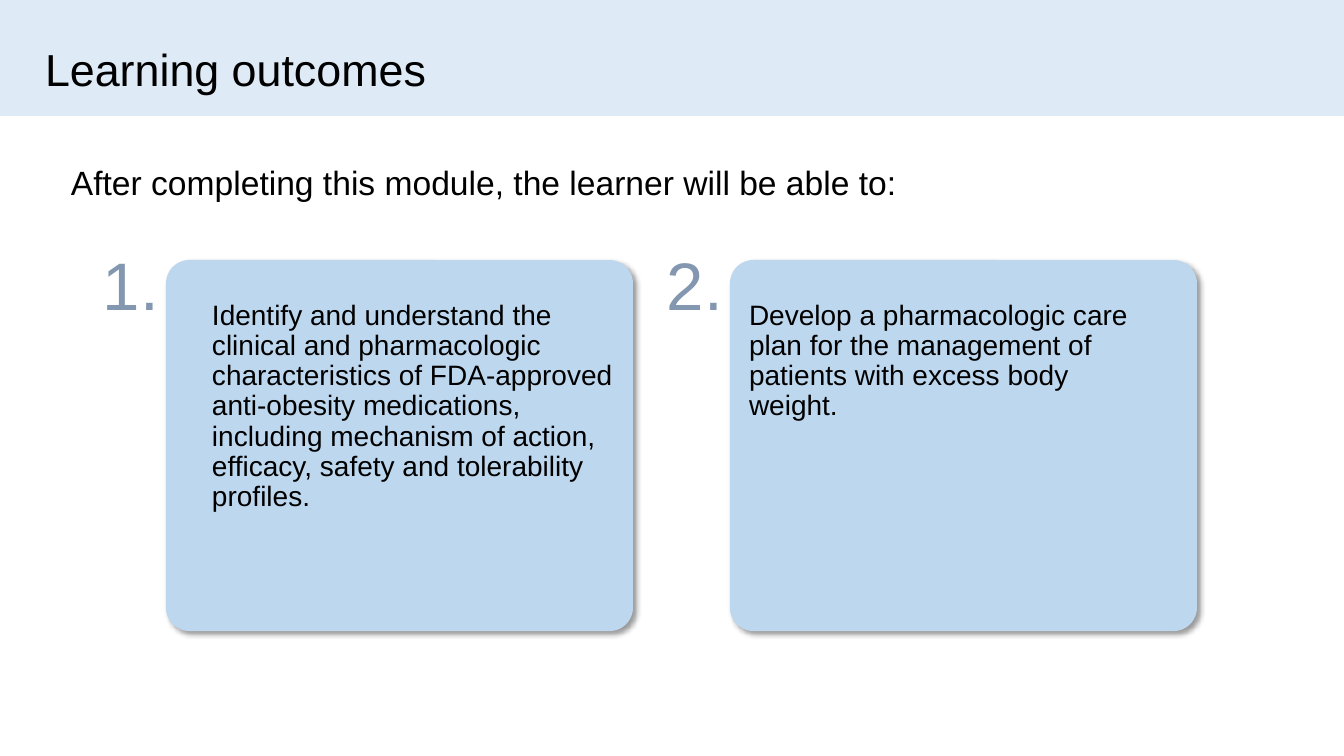
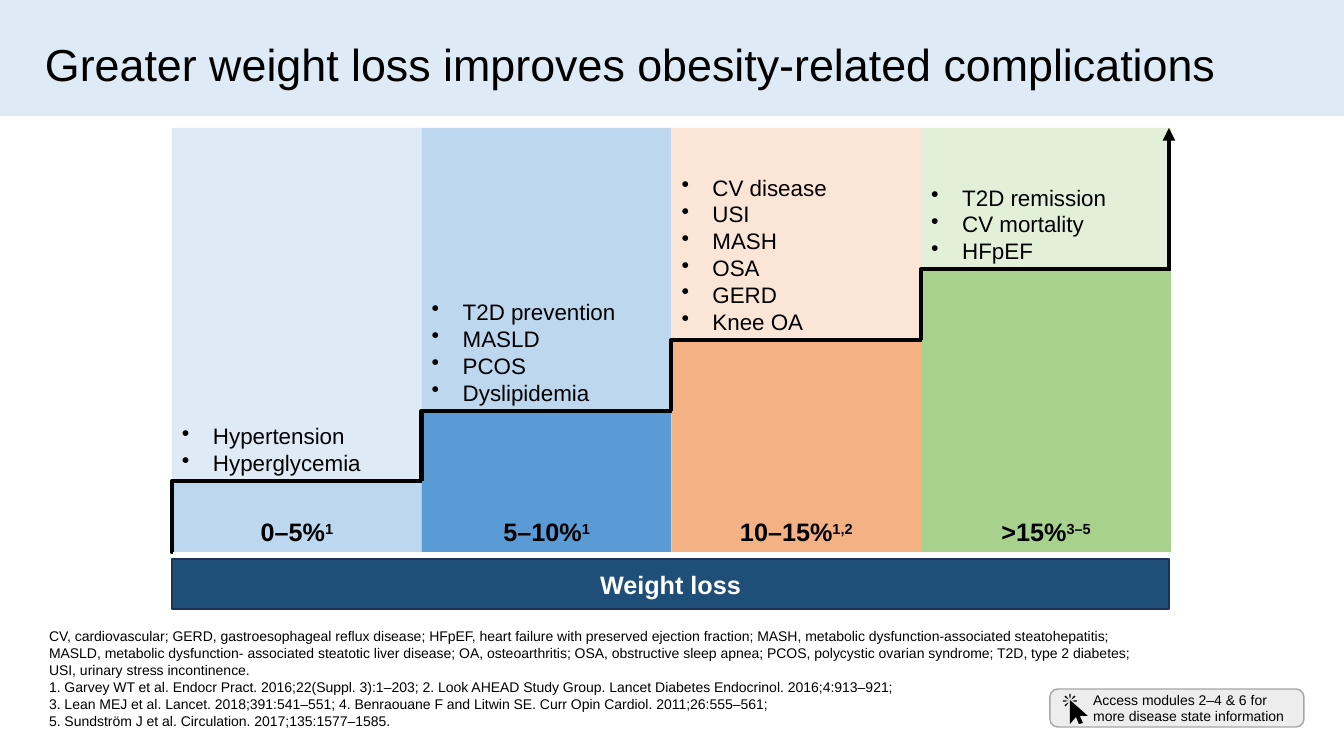
import math
from collections import namedtuple
from dataclasses import dataclass

from lxml import etree
from pptx import Presentation
from pptx import util as u
from pptx.dml.color import RGBColor
from pptx.enum import shapes, text
from pptx.oxml.ns import qn

EMU_PER_PX = 914400 / 100.8
Box = namedtuple("Box", "left top width height")
Step = namedtuple("Step", "label citation benefits column tint")


@dataclass(frozen=True)
class Theme:
    font: str = "Arial"
    ink: str = "000000"
    white: str = "FFFFFF"
    band: str = "DEEBF7"
    card: str = "BDD7EE"
    number: str = "8497B0"
    axis: str = "1F4E79"
    axis_line: str = "1E3256"
    button: str = "EDEDED"
    button_line: str = "A6A6A6"
    title_size: int = 32
    number_size: int = 48
    intro_size: int = 24
    card_size: int = 20
    label_size: int = 18
    list_size: int = 16
    note_size: int = 10


THEME = Theme()
SLIDE = Box(0, 0, 1344, 756)
BAND = Box(0, 0, 1344, 116)

OUTCOMES = [
    ("Identify and understand the clinical and pharmacologic characteristics of "
     "FDA-approved anti-obesity medications, including mechanism of action, "
     "efficacy, safety and tolerability profiles.", 46),
    ("Develop a pharmacologic care plan for the management of patients with "
     "excess body weight.", 19),
]

STEPS = [
    Step("0–5%", "1", ["Hypertension", "Hyperglycemia"], "BDD7EE", "DEEBF7"),
    Step("5–10%", "1", ["T2D prevention", "MASLD", "PCOS", "Dyslipidemia"],
         "5B9BD5", "BDD7EE"),
    Step("10–15%", "1,2", ["CV disease", "USI", "MASH", "OSA", "GERD", "Knee OA"],
         "F4B183", "FBE5D6"),
    Step(">15%", "3–5", ["T2D remission", "CV mortality", "HFpEF"],
         "A9D18E", "E2F0D9"),
]

NOTES = [
    "CV, cardiovascular; GERD, gastroesophageal reflux disease; HFpEF, heart failure "
    "with preserved ejection fraction; MASH, metabolic dysfunction-associated "
    "steatohepatitis; MASLD, metabolic dysfunction- associated steatotic liver disease; "
    "OA, osteoarthritis; OSA, obstructive sleep apnea; PCOS, polycystic ovarian syndrome; "
    "T2D, type 2 diabetes;\nUSI, urinary stress incontinence.",
    "1. Garvey WT et al. Endocr Pract. 2016;22(Suppl. 3):1–203; "
    "2. Look AHEAD Study Group. Lancet Diabetes Endocrinol. 2016;4:913–921;\n"
    "3. Lean MEJ et al. Lancet. 2018;391:541–551; "
    "4. Benraouane F and Litwin SE. Curr Opin Cardiol. 2011;26:555–561;\n"
    "5. Sundström J et al. Circulation. 2017;135:1577–1585.",
]


def px(length):
    return u.Emu(round(length * EMU_PER_PX))


def emu(box):
    return [px(length) for length in box]


def rgb(color):
    return RGBColor.from_string(color)


def write_text(shape, paragraphs, size, color=THEME.ink, bold=False, align="LEFT",
               anchor="TOP", spacing=None, insets=(10, 5, 10, 5), indent=0, bullet=None):
    """Fill a shape; a paragraph is a string or a (text, superscript) pair."""
    frame = shape.text_frame
    frame.word_wrap = True
    frame.vertical_anchor = getattr(text.MSO_ANCHOR, anchor)
    (frame.margin_left, frame.margin_top,
     frame.margin_right, frame.margin_bottom) = emu(insets)

    for index, content in enumerate(paragraphs):
        paragraph = frame.add_paragraph() if index else frame.paragraphs[0]
        properties = paragraph._p.get_or_add_pPr()
        properties.set("marL", str(px(indent)))
        properties.set("indent", str(-px(indent) if bullet else 0))
        if bullet:
            etree.SubElement(properties, qn("a:buChar"), char=bullet)
        paragraph.alignment = getattr(text.PP_ALIGN, align)
        if spacing:
            paragraph.line_spacing = spacing

        body, superscript = content if isinstance(content, tuple) else (content, None)
        for number, line in enumerate(body.split("\n")):
            if number:
                paragraph.add_line_break()
            paragraph.add_run().text = line
        if superscript:
            run = paragraph.add_run()
            run.text = superscript
            run.font._element.set("baseline", "30000")
        for run in paragraph.runs:
            run.font.name = THEME.font
            run.font.size = u.Pt(size)
            run.font.bold = bold
            run.font.color.rgb = rgb(color)
        for line_break in paragraph._p.findall(qn("a:br")):
            etree.SubElement(line_break, qn("a:rPr"), sz=str(size * 100))


def add_text(slide, box, paragraphs, size, **style):
    write_text(slide.shapes.add_textbox(*emu(box)), paragraphs, size, **style)


def paint(shape, fill, line=None):
    shape.fill.solid()
    shape.fill.fore_color.rgb = rgb(fill)
    if line:
        shape.line.color.rgb = rgb(line)
        shape.line.width = u.Pt(1)
    else:
        shape.line.fill.background()
    shape.shadow.inherit = False


def add_panel(slide, box, fill, line=None, corner=None):
    """Add a rectangle, rounded when a corner ratio is given."""
    kind = shapes.MSO_SHAPE.RECTANGLE if corner is None else shapes.MSO_SHAPE.ROUNDED_RECTANGLE
    panel = slide.shapes.add_shape(kind, *emu(box))
    if corner is not None:
        panel.adjustments[0] = corner
    paint(panel, fill, line)
    return panel


def add_drop_shadow(shape):
    effects = shape._element.spPr.find(qn("a:effectLst"))
    shadow = etree.SubElement(effects, qn("a:outerShdw"), blurRad=str(u.Pt(4)),
                              dist=str(u.Pt(3)), dir="2700000", algn="tl", rotWithShape="0")
    color = etree.SubElement(shadow, qn("a:srgbClr"), val=THEME.ink)
    etree.SubElement(color, qn("a:alpha"), val="40000")


def add_line(slide, start, end, kind="STRAIGHT", arrow=False):
    connector = slide.shapes.add_connector(
        getattr(shapes.MSO_CONNECTOR, kind), *emu((*start, *end)))
    connector.line.color.rgb = rgb(THEME.ink)
    connector.line.width = u.Pt(3)
    properties = connector._element.spPr
    if kind == "ELBOW":
        adjustments = properties.find(qn("a:prstGeom")).get_or_add_avLst()
        etree.SubElement(adjustments, qn("a:gd"), name="adj1", fmla="val -100")
    if arrow:
        etree.SubElement(connector.line._get_or_add_ln(), qn("a:tailEnd"), type="triangle")
    etree.SubElement(properties, qn("a:effectLst"))


def add_polygon(slide, points, fill):
    corners = [tuple(emu(point)) for point in points]
    builder = slide.shapes.build_freeform(*corners[0], scale=1.0)
    builder.add_line_segments(corners[1:], close=True)
    paint(builder.convert_to_shape(), fill)


def start_slide(presentation, title, title_box):
    slide = presentation.slides.add_slide(presentation.slide_layouts[6])
    add_panel(slide, BAND, THEME.band)
    add_text(slide, title_box, [title], THEME.title_size, anchor="MIDDLE", spacing=0.9)
    return slide


def add_outcome(slide, box, number, outcome, text_offset):
    """Add a card with its number hanging outside the top left corner."""
    add_drop_shadow(add_panel(slide, box, THEME.card, corner=0.063))
    add_text(slide, Box(box.left - 73, box.top - 22, 103, 92), [f"{number}."],
             THEME.number_size, color=THEME.number)
    add_text(slide, Box(box.left + text_offset, box.top + 29, 403, box.height - 87),
             [outcome], THEME.card_size, spacing=0.9, insets=(0, 12, 0, 12))


def add_staircase(slide, box):
    """Add one column per step, each a rise taller than the last, and its outline."""
    width = box.width / len(STEPS)
    rise = box.height / (len(STEPS) + 2)
    bottom = box.top + box.height
    for index, step in enumerate(STEPS):
        left = box.left + index * width
        height = (index + 1) * rise
        top = bottom - height
        column = add_panel(slide, Box(left, top, width, height), step.column)
        write_text(column, [(step.label, step.citation)], THEME.label_size,
                   bold=True, align="CENTER", anchor="BOTTOM")
        tint = add_panel(slide, Box(left, box.top, width, box.height - height), step.tint)
        write_text(tint, step.benefits, THEME.list_size, anchor="BOTTOM",
                   indent=31, bullet="•")

    for index in range(len(STEPS)):
        left = box.left + index * width
        foot = bottom - index * rise
        add_line(slide, (left, foot), (left + width, foot - rise), "ELBOW")
    right = box.left + box.width - 2
    add_line(slide, (right, box.top + 2 * rise), (right, box.top), arrow=True)


def add_axis_bar(slide, box):
    bar = add_panel(slide, box, THEME.axis, THEME.axis_line)
    write_text(bar, ["Weight loss"], THEME.label_size, color=THEME.white, bold=True,
               align="CENTER", anchor="MIDDLE")


def add_click_icon(slide, left, top):
    """Add a pointer with six rays around its tip."""
    for degrees in (0, 45, 90, 135, 180, 225):
        cosine, sine = math.cos(math.radians(degrees)), math.sin(math.radians(degrees))
        ray = [(2, 0), (5, 0.7), (7, 0.7), (7, -0.7), (5, -0.7)]
        add_polygon(slide, [(left + along * cosine - across * sine,
                             top - along * sine - across * cosine)
                            for along, across in ray], THEME.ink)
    pointer = [(0, -1), (18, 15), (10, 15), (13, 22), (9, 23), (6, 16), (0, 23)]
    add_polygon(slide, [(left + x, top + y) for x, y in pointer], THEME.ink)


def add_module_button(slide, box):
    button = add_panel(slide, box, THEME.button, THEME.button_line, corner=0.206)
    write_text(button, ["Access modules 2–4 & 6 for\nmore disease state information"],
               THEME.note_size, anchor="MIDDLE", indent=31)
    add_click_icon(slide, box.left + 20, box.top + 12)


def build_outcomes_slide(presentation):
    slide = start_slide(presentation, "Learning outcomes", Box(35, 34, 1159, 76))
    add_text(slide, Box(61, 161, 1202, 53),
             ["After completing this module, the learner will be able to:"],
             THEME.intro_size, spacing=0.9)
    for index, (outcome, text_offset) in enumerate(OUTCOMES):
        card = Box(166 + index * 564, 260, 467, 371)
        add_outcome(slide, card, index + 1, outcome, text_offset)


def build_weight_loss_slide(presentation):
    slide = start_slide(presentation,
                        "Greater weight loss improves obesity-related complications",
                        Box(35, 29, 1287, 76))
    add_text(slide, Box(39, 622, 1107, 112), NOTES, THEME.note_size, anchor="BOTTOM")
    add_staircase(slide, Box(172, 128, 999, 424))
    add_axis_bar(slide, Box(172, 559, 997, 50))
    add_module_button(slide, Box(1050, 689, 254, 38))


def main():
    presentation = Presentation()
    presentation.slide_width, presentation.slide_height = px(SLIDE.width), px(SLIDE.height)
    build_outcomes_slide(presentation)
    build_weight_loss_slide(presentation)
    presentation.save("out.pptx")


if __name__ == "__main__":
    main()
